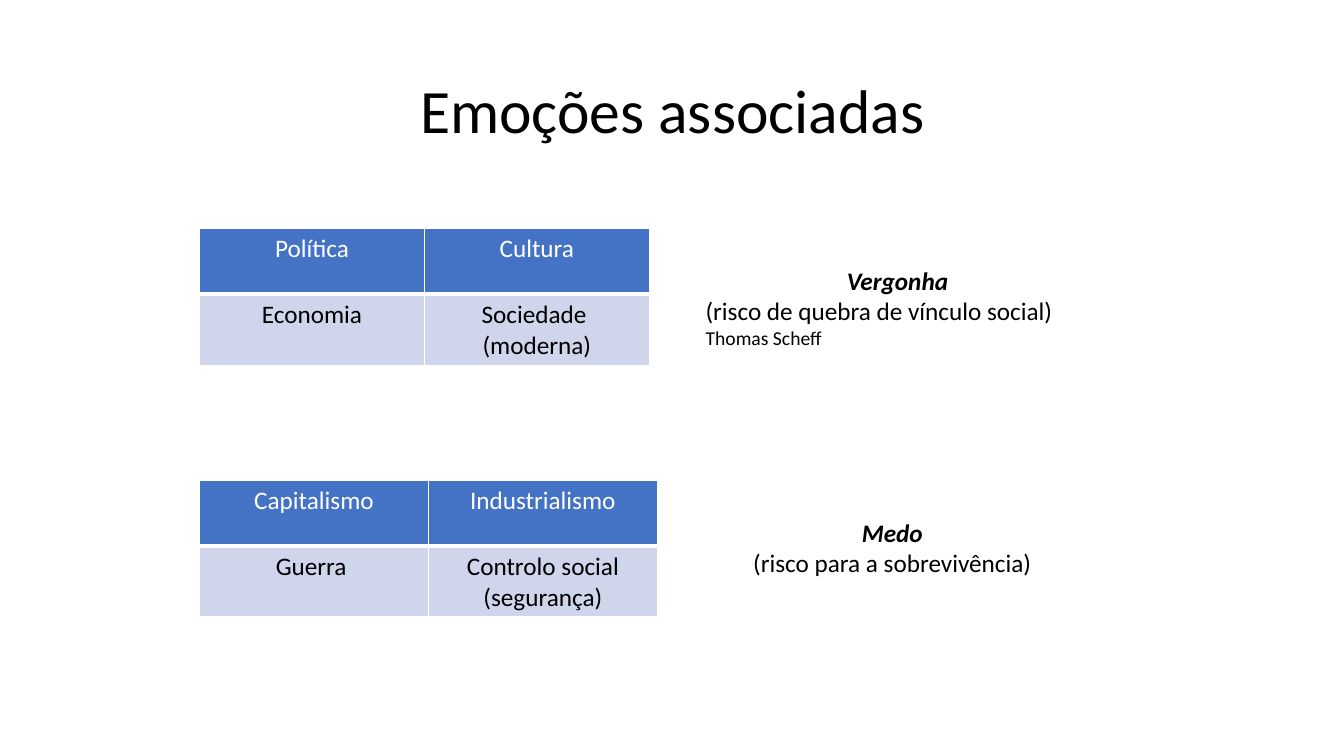
from dataclasses import dataclass

from lxml.etree import SubElement
from pptx import Presentation
from pptx.dml.color import RGBColor
from pptx.enum.text import MSO_ANCHOR, MSO_AUTO_SIZE, PP_ALIGN
from pptx.oxml.ns import qn
from pptx.slide import Slide
from pptx.table import _Cell
from pptx.text.text import TextFrame
from pptx.util import Emu, Pt

PX = 9144
FONT = "Calibri"
BLACK = RGBColor(0x00, 0x00, 0x00)
WHITE = RGBColor(0xFF, 0xFF, 0xFF)
HEADER_BLUE = RGBColor(0x44, 0x72, 0xC4)
BODY_BLUE = RGBColor(0xCF, 0xD5, 0xEA)
ROW_HEIGHTS = (65, 70)


@dataclass(frozen=True)
class Line:
    text: str
    size: int = 18
    color: RGBColor = BLACK
    emphasis: bool = False
    align: PP_ALIGN = PP_ALIGN.CENTER
    spacing: float = 1.0


@dataclass(frozen=True)
class Box:
    left: int
    top: int
    width: int
    height: int

    def emu(self) -> tuple[Emu, ...]:
        return tuple(px(n) for n in (self.left, self.top, self.width, self.height))


@dataclass(frozen=True)
class Caption:
    box: Box
    lines: tuple[Line, ...]
    anchor: MSO_ANCHOR = MSO_ANCHOR.TOP
    auto_size: MSO_AUTO_SIZE = MSO_AUTO_SIZE.SHAPE_TO_FIT_TEXT


@dataclass(frozen=True)
class Quadrant:
    box: Box
    rows: tuple[tuple[tuple[str, ...], ...], ...]


TITLE = Caption(
    Box(92, 40, 1150, 145),
    (Line("Emoções associadas", size=44, spacing=0.9),),
    MSO_ANCHOR.MIDDLE,
    MSO_AUTO_SIZE.NONE,
)
SHAME = Caption(
    Box(690, 258, 406, 94),
    (
        Line("Vergonha ", emphasis=True),
        Line("(risco de quebra de vínculo social)", align=PP_ALIGN.LEFT),
        Line("Thomas Scheff", size=14, align=PP_ALIGN.LEFT),
    ),
)
FEAR = Caption(
    Box(682, 508, 406, 71),
    (Line("Medo", emphasis=True), Line("(risco para a sobrevivência)")),
)
SOCIETY = Quadrant(
    Box(198, 227, 446, 135),
    (
        (("Política",), ("Cultura",)),
        (("Economia",), ("Sociedade ", "(moderna)")),
    ),
)
MODERNITY = Quadrant(
    Box(198, 477, 454, 135),
    (
        (("Capitalismo",), ("Industrialismo",)),
        (("Guerra ",), ("Controlo social (segurança)",)),
    ),
)


def px(length: int) -> Emu:
    return Emu(length * PX)


def write_lines(frame: TextFrame, lines: tuple[Line, ...]) -> None:
    for index, line in enumerate(lines):
        paragraph = frame.add_paragraph() if index else frame.paragraphs[0]
        paragraph.alignment = line.align
        paragraph.line_spacing = line.spacing
        run = paragraph.add_run()
        run.text = line.text
        run.font.name = FONT
        run.font.size = Pt(line.size)
        run.font.bold = run.font.italic = line.emphasis
        run.font.color.rgb = line.color


def add_caption(slide: Slide, caption: Caption) -> None:
    shape = slide.shapes.add_textbox(*caption.box.emu())
    frame = shape.text_frame
    frame.word_wrap = True
    frame.auto_size = caption.auto_size
    frame.vertical_anchor = caption.anchor
    write_lines(frame, caption.lines)


def add_borders(cell: _Cell, bottom: int) -> None:
    properties = cell._tc.get_or_add_tcPr()
    for side, width in (("L", 1), ("R", 1), ("T", 1), ("B", bottom)):
        border = SubElement(properties, qn(f"a:ln{side}"), w=str(Pt(width)))
        fill = SubElement(border, qn("a:solidFill"))
        SubElement(fill, qn("a:srgbClr"), val=str(WHITE))


def add_quadrant(slide: Slide, quadrant: Quadrant) -> None:
    shape = slide.shapes.add_table(2, 2, *quadrant.box.emu())
    table = shape.table
    table.horz_banding = False
    for column in table.columns:
        column.width = px(quadrant.box.width // 2)
    for row_index, (row, height) in enumerate(zip(quadrant.rows, ROW_HEIGHTS)):
        table.rows[row_index].height = px(height)
        is_header = row_index == 0
        for column_index, texts in enumerate(row):
            cell = table.cell(row_index, column_index)
            add_borders(cell, 3 if is_header else 1)
            cell.fill.solid()
            cell.fill.fore_color.rgb = HEADER_BLUE if is_header else BODY_BLUE
            color = WHITE if is_header else BLACK
            write_lines(cell.text_frame, tuple(Line(text, color=color) for text in texts))


def main() -> None:
    presentation = Presentation()
    presentation.slide_width = px(1333)
    presentation.slide_height = px(750)
    slide = presentation.slides.add_slide(presentation.slide_layouts[6])
    add_caption(slide, TITLE)
    for quadrant, emotion in ((SOCIETY, SHAME), (MODERNITY, FEAR)):
        add_quadrant(slide, quadrant)
        add_caption(slide, emotion)
    presentation.save("out.pptx")


if __name__ == "__main__":
    main()
